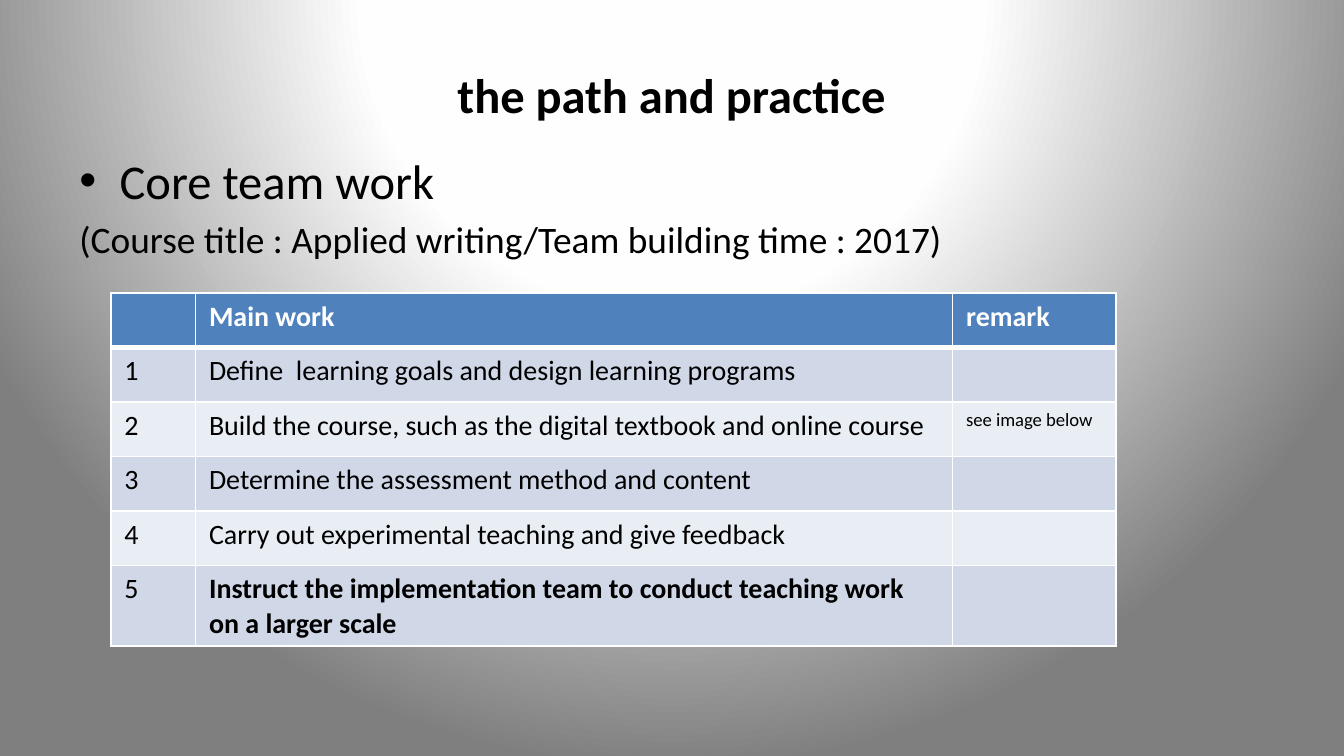
from lxml import etree
from pptx import Presentation
from pptx.dml.color import RGBColor
from pptx.enum.text import MSO_ANCHOR, PP_ALIGN
from pptx.oxml.ns import qn
from pptx.util import Pt

TITLE = "the path and practice"
BODY = [  # text, size, space before, bulleted
    ("Core team work", 26, 0, True),
    ("(Course title : Applied writing/Team building time : 2017)", 20, 4, False),
]
HEADER = ("", "Main work", "remark")
TASKS = [  # main work, remark, bold
    ("Define  learning goals and design learning programs", "", False),
    ("Build the course, such as the digital textbook and online course", "see image below", False),
    ("Determine the assessment method and content", "", False),
    ("Carry out experimental teaching and give feedback", "", False),
    ("Instruct the implementation team to conduct teaching work on a larger scale", "", True),
]

FONT = "Calibri"
BLACK = RGBColor(0x00, 0x00, 0x00)
WHITE = RGBColor(0xFF, 0xFF, 0xFF)
BLUE = RGBColor(0x4F, 0x81, 0xBD)
BANDS = (RGBColor(0xD0, 0xD8, 0xE8), RGBColor(0xE9, 0xED, 0xF4))
BACKGROUND_STOPS = [(0, WHITE), (40, RGBColor(0xFE, 0xFE, 0xFE)), (100, RGBColor(0x7F, 0x7F, 0x7F))]
GRADIENT_CENTRE = {"l": 50, "t": -80, "r": 50, "b": 180}

TITLE_BOX = (36, 16.6, 648, 67.6)
BODY_BOX = (36.7, 77.8, 648, 267)
TABLE_LEFT, TABLE_TOP = 59.4, 157
COLUMN_WIDTHS = (45.4, 405.6, 87.6)
ROW_HEIGHT = 29.2
BULLET_INDENT = 21.6
FRAME_FORMAT = {
    "word_wrap": True,
    "margin_left": Pt(5.8), "margin_right": Pt(5.8),
    "margin_top": Pt(2.9), "margin_bottom": Pt(2.9),
}


def add_xml(parent, tag, **attributes):
    return etree.SubElement(parent, qn(tag), {name: str(value) for name, value in attributes.items()})


def write(paragraph, text, size, color=BLACK, bold=False):
    run = paragraph.add_run()
    run.text = text
    for name, value in {"name": FONT, "size": Pt(size), "bold": bold}.items():
        setattr(run.font, name, value)
    run.font.color.rgb = color


def set_frame(frame, anchor):
    for name, value in {**FRAME_FORMAT, "vertical_anchor": anchor}.items():
        setattr(frame, name, value)


def paint_background(slide):
    """Circular gradient centred above the slide."""
    slide.background.fill.gradient()
    gradient = next(slide.element.iter(qn("a:gradFill")))
    for child in list(gradient):
        gradient.remove(child)
    stops = add_xml(gradient, "a:gsLst")
    for position, color in BACKGROUND_STOPS:
        add_xml(add_xml(stops, "a:gs", pos=position * 1000), "a:srgbClr", val=color)
    circle = add_xml(gradient, "a:path", path="circle")
    add_xml(circle, "a:fillToRect", **{side: value * 1000 for side, value in GRADIENT_CENTRE.items()})


def add_title(slide):
    title = slide.shapes.title
    title.left, title.top, title.width, title.height = map(Pt, TITLE_BOX)
    set_frame(title.text_frame, MSO_ANCHOR.MIDDLE)
    paragraph = title.text_frame.paragraphs[0]
    paragraph.alignment = PP_ALIGN.CENTER
    write(paragraph, TITLE, 26, bold=True)


def add_body(slide):
    frame = slide.shapes.add_textbox(*map(Pt, BODY_BOX)).text_frame
    set_frame(frame, MSO_ANCHOR.TOP)
    for index, (text, size, space, bulleted) in enumerate(BODY):
        paragraph = frame.add_paragraph() if index else frame.paragraphs[0]
        paragraph.space_before = Pt(space)
        write(paragraph, text, size)
        if bulleted:
            properties = paragraph._p.get_or_add_pPr()
            properties.set("marL", str(Pt(BULLET_INDENT)))
            properties.set("indent", str(-Pt(BULLET_INDENT)))
            add_xml(properties, "a:buFont", typeface="Arial")
            add_xml(properties, "a:buChar", char="•")


def format_cell(cell, fill, bottom_width):
    properties = cell._tc.get_or_add_tcPr()
    for side, width in (("L", 1), ("R", 1), ("T", 1), ("B", bottom_width)):
        line = add_xml(properties, f"a:ln{side}", w=Pt(width))
        add_xml(add_xml(line, "a:solidFill"), "a:srgbClr", val=WHITE)
    cell.fill.solid()
    cell.fill.fore_color.rgb = fill


def add_task_table(slide):
    row_count = len(TASKS) + 1
    table = slide.shapes.add_table(
        row_count, len(HEADER), Pt(TABLE_LEFT), Pt(TABLE_TOP),
        Pt(sum(COLUMN_WIDTHS)), Pt(ROW_HEIGHT * row_count),
    ).table
    for column, width in zip(table.columns, COLUMN_WIDTHS):
        column.width = Pt(width)
    for row in table.rows:
        row.height = Pt(ROW_HEIGHT)

    for column, text in enumerate(HEADER):
        cell = table.cell(0, column)
        format_cell(cell, BLUE, 3)
        if text:
            write(cell.text_frame.paragraphs[0], text, 15, WHITE, True)

    for number, (work, remark, bold) in enumerate(TASKS, 1):
        contents = ((str(number), 15, False), (work, 15, bold), (remark, 10, False))
        for column, (text, size, is_bold) in enumerate(contents):
            cell = table.cell(number, column)
            format_cell(cell, BANDS[(number - 1) % 2], 1)
            if text:
                write(cell.text_frame.paragraphs[0], text, size, bold=is_bold)


def main():
    presentation = Presentation()
    presentation.slide_width, presentation.slide_height = Pt(720), Pt(405)
    slide = presentation.slides.add_slide(presentation.slide_layouts[5])
    paint_background(slide)
    add_title(slide)
    add_body(slide)
    add_task_table(slide)
    presentation.save("out.pptx")


if __name__ == "__main__":
    main()
